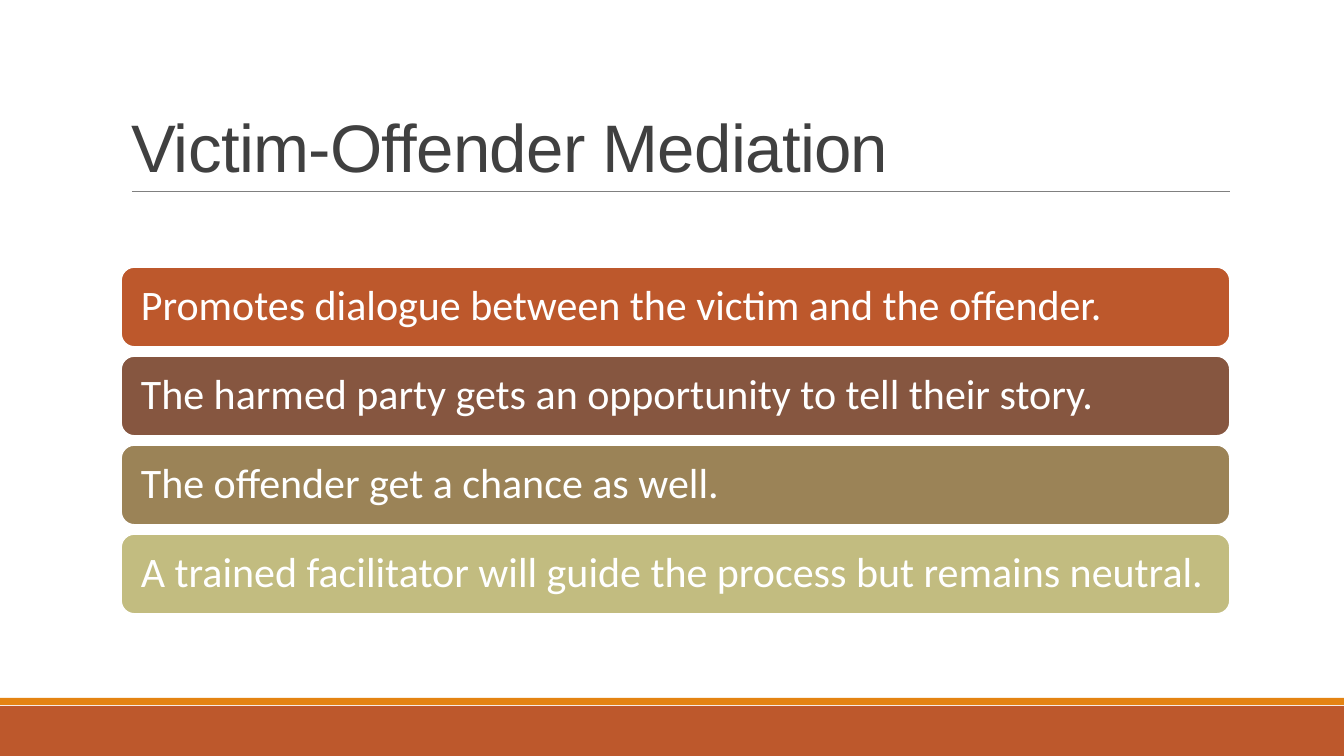
import pptx
import pptx.util
import pptx.dml.color
import pptx.enum.shapes
import pptx.enum.text
import pptx.oxml.ns
import lxml.etree

PX = 914400 / 100.8
SHAPE = pptx.enum.shapes.MSO_SHAPE
ANCHOR = pptx.enum.text.MSO_ANCHOR
LEFT_ALIGN = pptx.enum.text.PP_ALIGN.LEFT

POINTS = [
    ("Promotes dialogue between the victim and the offender.", "BD582C"),
    ("The harmed party gets an opportunity to tell their story.", "865640"),
    ("The offender get a chance as well.", "9B8357"),
    ("A trained facilitator will guide the process but remains neutral.", "C2BC80"),
]
BAR_LEFT, BAR_TOP, BAR_WIDTH, BAR_HEIGHT, BAR_STEP = 121, 267, 1109, 80, 89


def px(length):
    return pptx.util.Emu(round(length * PX))


def colour(hex_value):
    return pptx.dml.color.RGBColor.from_string(hex_value)


def apply(target, values):
    for name, value in values.items():
        setattr(target, name, value)


def place(element, left, top, width, height):
    apply(element, {"left": px(left), "top": px(top),
                    "width": px(width), "height": px(height)})


def write(frame, wording, font, size, text_colour, line_spacing, anchor):
    apply(frame, {"word_wrap": True, "vertical_anchor": anchor,
                  "auto_size": pptx.enum.text.MSO_AUTO_SIZE.NONE})
    paragraph = frame.paragraphs[0]
    apply(paragraph, {"alignment": LEFT_ALIGN, "line_spacing": line_spacing})
    run = paragraph.add_run()
    run.text = wording
    apply(run.font, {"name": font, "size": pptx.util.Pt(size)})
    run.font.color.rgb = colour(text_colour)
    return run


def add_block(slide, preset, box, fill, outline=None):
    block = slide.shapes.add_shape(preset, *map(px, box))
    block.shadow.inherit = False
    block.fill.solid()
    block.fill.fore_color.rgb = colour(fill)
    if outline:
        block.line.color.rgb = colour(outline)
        block.line.width = pptx.util.Pt(1.25)
    else:
        block.line.fill.background()
    return block


def add_rule(slide, left, right, y):
    rule = slide.shapes.add_connector(
        pptx.enum.shapes.MSO_CONNECTOR.STRAIGHT, px(left), px(y), px(right), px(y))
    rule.line.color.rgb = colour("808080")
    rule.line.width = pptx.util.Pt(0.5)
    lxml.etree.SubElement(rule._element.spPr, pptx.oxml.ns.qn("a:effectLst"))


def add_title(slide, wording):
    title = slide.shapes.title
    place(title, BAR_LEFT, 31, BAR_WIDTH, 160)
    run = write(title.text_frame, wording, "Arial", 48, "404040", 0.85, ANCHOR.BOTTOM)
    run.font._element.set("spc", "-50")


def add_point(slide, top, wording, fill):
    bar = add_block(slide, SHAPE.ROUNDED_RECTANGLE,
                    (BAR_LEFT, top, BAR_WIDTH, BAR_HEIGHT), fill, "FFFFFF")
    apply(bar.text_frame, {"margin_left": px(16), "margin_right": px(16),
                           "margin_top": px(16), "margin_bottom": px(16)})
    write(bar.text_frame, wording, "Calibri", 30, "FFFFFF", 0.9, ANCHOR.MIDDLE)


def main():
    deck = pptx.Presentation()
    apply(deck, {"slide_width": px(1344), "slide_height": px(756)})
    slide = deck.slides.add_slide(deck.slide_layouts[5])
    add_block(slide, SHAPE.RECTANGLE, (0, 706, 1344, 50), "BD582C")
    add_block(slide, SHAPE.RECTANGLE, (0, 698, 1344, 7), "E48312")
    add_rule(slide, 132, 1230, 191)
    add_title(slide, "Victim-Offender Mediation")
    for index, (wording, fill) in enumerate(POINTS):
        add_point(slide, BAR_TOP + index * BAR_STEP, wording, fill)
    deck.save("out.pptx")


if __name__ == "__main__":
    main()
